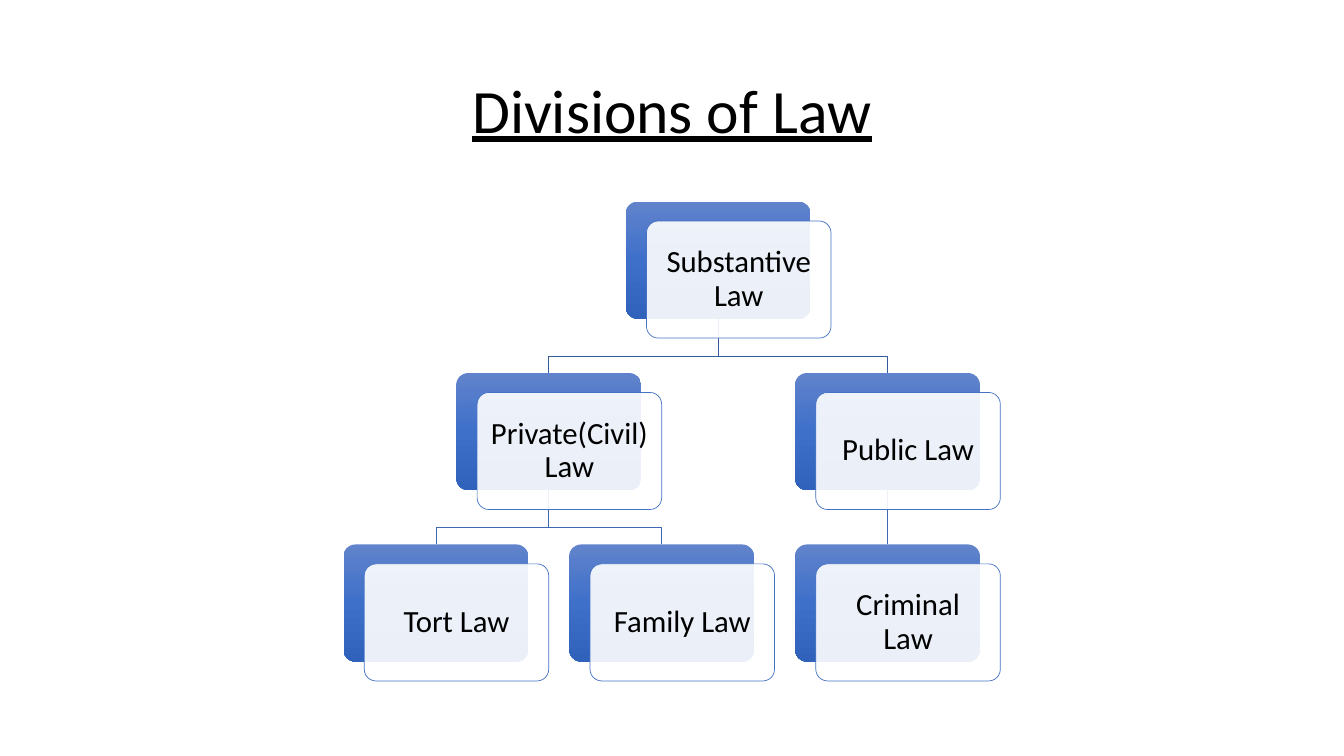
from dataclasses import dataclass

from lxml import etree
from pptx import Presentation
from pptx.dml.color import RGBColor
from pptx.enum.shapes import MSO_CONNECTOR, MSO_SHAPE
from pptx.enum.text import MSO_ANCHOR, PP_ALIGN
from pptx.oxml.ns import qn
from pptx.shapes.autoshape import Shape
from pptx.slide import Slide
from pptx.util import Cm, Pt

STRAIGHT = MSO_CONNECTOR.STRAIGHT
ROUNDED_RECTANGLE = MSO_SHAPE.ROUNDED_RECTANGLE
MIDDLE = MSO_ANCHOR.MIDDLE
CENTER = PP_ALIGN.CENTER


@dataclass(frozen=True)
class Theme:
    font: str = "Calibri"
    title_size: float = 44
    card_size: float = 22
    text: str = "000000"
    panel: str = "FFFFFF"
    panel_opacity: int = 90
    outline: str = "4472C4"
    gradient: tuple[tuple[int, str], ...] = ((0, "6183CB"), (50, "3E70CA"), (100, "3062BB"))
    links: tuple[str, ...] = ("365B9D", "3E67B2")
    line_width: float = 0.5


@dataclass(frozen=True)
class Division:
    label: str
    column: float
    level: int
    parent: str = ""

    @property
    def left(self) -> float:
        return TREE_LEFT + self.column * COLUMN_STEP

    @property
    def top(self) -> float:
        return TREE_TOP + self.level * LEVEL_STEP

    @property
    def middle(self) -> float:
        return self.left + CARD_WIDTH / 2


THEME = Theme()
TREE_LEFT, TREE_TOP = 8.66, 5.08
COLUMN_STEP, LEVEL_STEP = 5.69, 4.32
CARD_WIDTH, CARD_HEIGHT = 4.65, 2.95
PANEL_SHIFT_X, PANEL_SHIFT_Y = 0.52, 0.49
PANEL_INSET = 0.23
BEND_DROP = 0.94

DIVISIONS = (
    Division("Substantive Law", 1.25, 0),
    Division("Private(Civil) Law", 0.5, 1, "Substantive Law"),
    Division("Tort Law", 0, 2, "Private(Civil) Law"),
    Division("Family Law", 1, 2, "Private(Civil) Law"),
    Division("Public Law", 2, 1, "Substantive Law"),
    Division("Criminal Law", 2, 2, "Public Law"),
)


def write_text(shape: Shape, text: str, *, size: float, inset: float, underline: bool = False) -> None:
    frame = shape.text_frame
    frame.word_wrap = True
    frame.vertical_anchor = MIDDLE
    frame.margin_left = frame.margin_right = Cm(inset)
    frame.margin_top = frame.margin_bottom = Cm(inset)
    paragraph = frame.paragraphs[0]
    paragraph.alignment = CENTER
    paragraph.line_spacing = 0.9
    run = paragraph.add_run()
    run.text = text
    run.font.name = THEME.font
    run.font.size = Pt(size)
    run.font.underline = underline
    run.font.color.rgb = RGBColor.from_string(THEME.text)


def apply_gradient(shape: Shape) -> None:
    shape.fill.gradient()
    shape.fill.gradient_angle = 270
    stops = shape.element.spPr.find(".//" + qn("a:gsLst"))
    for stop in list(stops):
        stops.remove(stop)
    for position, color in THEME.gradient:
        stop = etree.SubElement(stops, qn("a:gs"), pos=str(position * 1000))
        etree.SubElement(stop, qn("a:srgbClr"), val=color)


def add_rounded(slide: Slide, left: float, top: float) -> Shape:
    shape = slide.shapes.add_shape(
        ROUNDED_RECTANGLE, Cm(left), Cm(top), Cm(CARD_WIDTH), Cm(CARD_HEIGHT)
    )
    shape.adjustments[0] = 0.1
    shape.shadow.inherit = False
    return shape


def add_card(slide: Slide, division: Division) -> None:
    back = add_rounded(slide, division.left, division.top)
    apply_gradient(back)
    back.line.fill.background()

    panel = add_rounded(slide, division.left + PANEL_SHIFT_X, division.top + PANEL_SHIFT_Y)
    panel.fill.solid()
    panel.fill.fore_color.rgb = RGBColor.from_string(THEME.panel)
    color = panel.element.spPr.find(qn("a:solidFill")).find(qn("a:srgbClr"))
    etree.SubElement(color, qn("a:alpha"), val=str(THEME.panel_opacity * 1000))
    panel.line.color.rgb = RGBColor.from_string(THEME.outline)
    panel.line.width = Pt(THEME.line_width)
    write_text(panel, division.label, size=THEME.card_size, inset=PANEL_INSET)


def add_link(slide: Slide, parent: Division, child: Division) -> None:
    start_x, end_x = Cm(parent.middle), Cm(child.middle)
    start_y, end_y = Cm(parent.top + CARD_HEIGHT), Cm(child.top)
    if parent.column == child.column:
        link = slide.shapes.add_connector(STRAIGHT, start_x, start_y, end_x, end_y)
    else:
        bend_y = Cm(parent.top + CARD_HEIGHT + BEND_DROP)
        builder = slide.shapes.build_freeform(start_x, start_y)
        builder.add_line_segments(
            [(start_x, bend_y), (end_x, bend_y), (end_x, end_y)], close=False
        )
        link = builder.convert_to_shape()
        link.fill.background()
    link.line.color.rgb = RGBColor.from_string(THEME.links[parent.level])
    link.line.width = Pt(THEME.line_width)
    etree.SubElement(link.element.spPr, qn("a:effectLst"))


def main() -> None:
    presentation = Presentation()
    presentation.slide_width, presentation.slide_height = Cm(33.87), Cm(19.05)
    slide = presentation.slides.add_slide(presentation.slide_layouts[6])
    title = slide.shapes.add_textbox(Cm(2.33), Cm(1.01), Cm(29.21), Cm(3.68))
    write_text(title, "Divisions of Law", size=THEME.title_size, inset=0.13, underline=True)

    by_label = {division.label: division for division in DIVISIONS}
    for division in DIVISIONS:
        if division.parent:
            add_link(slide, by_label[division.parent], division)
    for division in DIVISIONS:
        add_card(slide, division)
    presentation.save("out.pptx")


if __name__ == "__main__":
    main()
